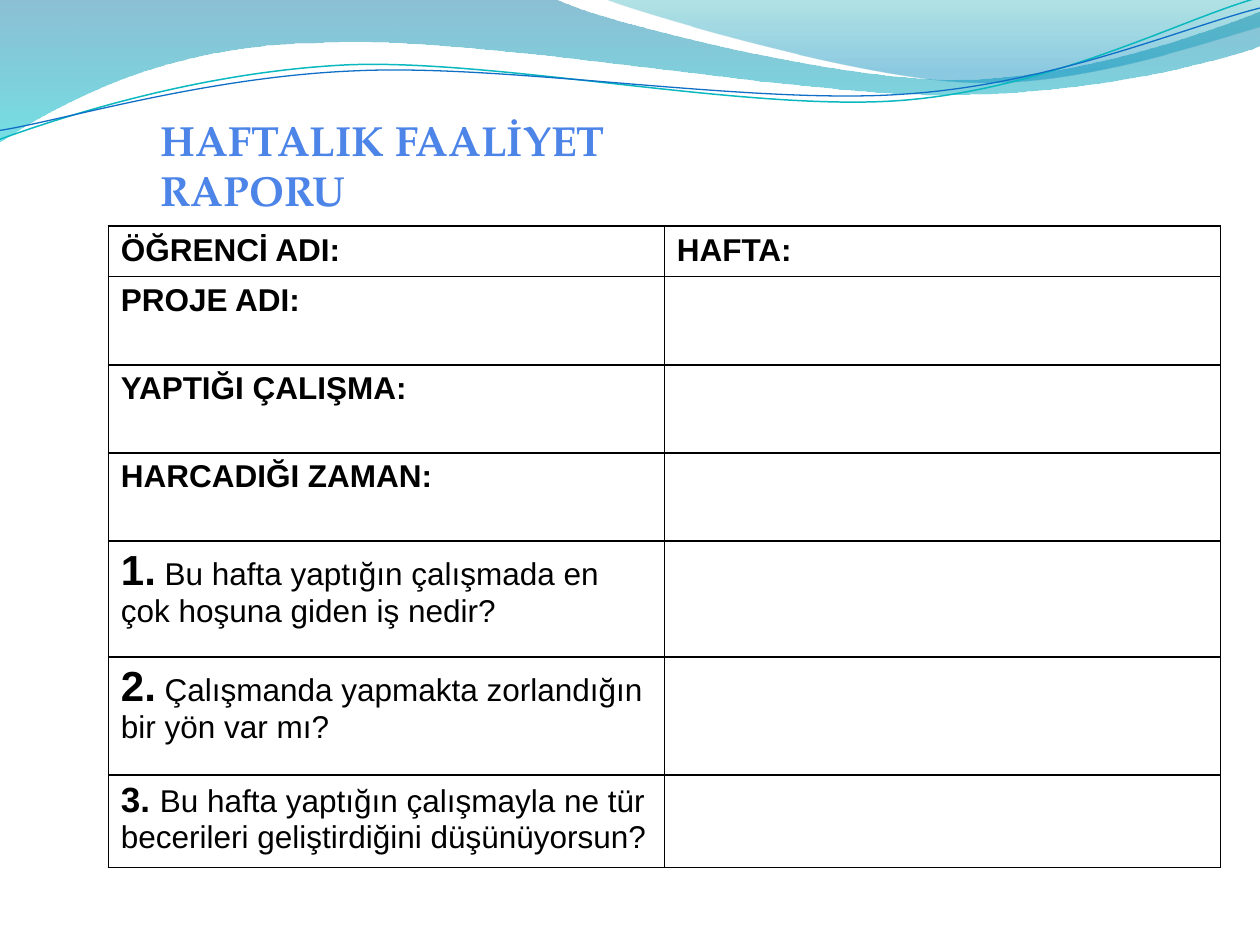
from lxml import etree
from pptx import Presentation
from pptx.dml.color import RGBColor
from pptx.enum.text import MSO_AUTO_SIZE
from pptx.oxml.ns import qn
from pptx.util import Inches, Pt

COLUMNS, ROWS = 100, 75
HEADING_FONT, BODY_FONT = "TeX Gyre Pagella", "Arial"
BLACK, HEADING_BLUE = "000000", "4C84E8"
GROW = MSO_AUTO_SIZE.SHAPE_TO_FIT_TEXT
STRAND_TILT = 357.3
CELL_EDGES = ("a:lnL", "a:lnR", "a:lnT", "a:lnB")


def rgb(value):
    return RGBColor.from_string(value)


def add_text(paragraph, text, size=18, font=BODY_FONT, color=BLACK, bold=False):
    run = paragraph.add_run()
    run.text = text
    run.font.size = Pt(size)
    run.font.name = font
    run.font.bold = bold
    run.font.color.rgb = rgb(color)


def bend(shape, segments):
    """Join the three straight steps of each six-number segment into one cubic curve."""
    steps = iter(list(shape._element.iter(qn("a:lnTo"))))
    for segment in segments:
        first = next(steps)
        if len(segment) == 6:
            curve = etree.Element(qn("a:cubicBezTo"))
            first.addprevious(curve)
            for step in (first, next(steps), next(steps)):
                curve.append(step[0])
                step.getparent().remove(step)


class ReportSlide:
    """Places elements on a grid of 100 columns by 75 rows."""

    def __init__(self, presentation):
        self.width, self.height = presentation.slide_width, presentation.slide_height
        self.slide = presentation.slides.add_slide(presentation.slide_layouts[6])

    def x(self, columns):
        return round(self.width * columns / COLUMNS)

    def y(self, rows):
        return round(self.height * rows / ROWS)

    def outline(self, start, segments, closed):
        """A segment is a line end (2 numbers) or a cubic curve (6 numbers)."""
        places = [(self.x(segment[i]), self.y(segment[i + 1]))
                  for segment in segments for i in range(0, len(segment), 2)]
        builder = self.slide.shapes.build_freeform(self.x(start[0]), self.y(start[1]))
        builder.add_line_segments(places, close=closed)
        shape = builder.convert_to_shape()
        bend(shape, segments)
        shape.shadow.inherit = False
        return shape

    def wave(self, start, segments, stops):
        """Fill a closed outline downwards; each stop is position, colour, opacity in %."""
        shape = self.outline(start, segments, closed=True)
        shape.line.fill.background()
        shape.fill.gradient()
        shape.fill.gradient_angle = 270
        gradient_stops = shape._element.spPr.iter(qn("a:gs"))
        for stop, element, (position, color, opacity) in zip(
                shape.fill.gradient_stops, gradient_stops, stops):
            stop.color.rgb = rgb(color)
            stop.position = position / 100
            alpha = etree.SubElement(element[0], qn("a:alpha"))
            alpha.set("val", str(opacity * 1000))

    def strand(self, start, segments, color, width):
        shape = self.outline(start, segments, closed=False)
        shape.rotation = STRAND_TILT
        shape.fill.background()
        shape.line.color.rgb = rgb(color)
        shape.line.width = Pt(width)

    def heading(self, text, left, top, width, height):
        box = self.slide.shapes.add_textbox(
            self.x(left), self.y(top), self.x(width), self.y(height))
        box.text_frame.word_wrap = True
        box.text_frame.auto_size = GROW
        add_text(box.text_frame.paragraphs[0], text,
                 size=24, font=HEADING_FONT, color=HEADING_BLUE, bold=True)

    def border(self, cell):
        properties = cell._tc.get_or_add_tcPr()
        for position, edge in enumerate(CELL_EDGES):
            line = etree.Element(qn(edge), w=str(Pt(1)))
            fill = etree.SubElement(line, qn("a:solidFill"))
            etree.SubElement(fill, qn("a:srgbClr"), val=BLACK)
            properties.insert(position, line)

    def form(self, entries, left, top, width, heights):
        """Each entry holds the cells of one row; a cell is a list of (text, format)."""
        table = self.slide.shapes.add_table(
            len(entries), 2, self.x(left), self.y(top),
            self.x(width), self.y(sum(heights))).table
        table.first_row = table.horz_banding = False
        for row, height, cells in zip(table.rows, heights, entries):
            row.height = self.y(height)
            for cell, pieces in zip(row.cells, cells):
                cell.fill.background()
                self.border(cell)
                for text, style in pieces:
                    add_text(cell.text_frame.paragraphs[0], text, **style)


def label(text):
    return [(text, {"bold": True})]


def question(number, text):
    return [(number, {"size": 24, "bold": True}), (" ", {"bold": True}), (text, {})]


def main():
    presentation = Presentation()
    presentation.slide_width, presentation.slide_height = Inches(10), Inches(7.5)
    report = ReportSlide(presentation)

    report.wave(
        (0, -0.1),
        [(44, -0.1), (47.6, 1.7, 66.4, 6.3, 75.8, 6.3),
         (85.3, 6.3, 95.8, 2.6, 100, 0.9), (100.1, 3.6),
         (98.3, 4.4, 87, 7.6, 74.6, 7.5), (62.2, 7.5, 38.2, 2.8, 25.7, 3.4),
         (12.9, 3.5, 4.6, 8.3, -0.1, 11.3)],
        [(0, "0074A1", 45), (100, "00C6CF", 55)])
    report.wave(
        (47.9, -0.1),
        [(50.9, 1.1, 68.2, 6.2, 76.9, 6.5), (85.6, 6.9, 96.1, 3.2, 100, 2.1), (100, 0)],
        [(0, "00A1A9", 30), (80, "008BBF", 45)])
    report.strand(
        (-0.2, 8.7),
        [(4.7, 7.2, 15.8, 4.1, 27.7, 4.1), (39.6, 4.2, 59.1, 9.3, 71.2, 9),
         (83.2, 8.7, 93.9, 3.6, 100, 2.2)],
        "0AB8BF", 0.85)
    report.strand(
        (-0.2, 8),
        [(4.6, 7.5, 16.4, 4.5, 28.3, 4.6), (40.3, 4.6, 59.6, 8.8, 71.6, 8.5),
         (83.5, 8.3, 94.2, 4.2, 100.2, 3)],
        "0F6FC6", 0.75)

    report.heading("HAFTALIK FAALİYET RAPORU", left=11.75, top=8.6, width=50.5, height=5.1)
    report.form(
        [
            (label("ÖĞRENCİ ADI:"), label("HAFTA:")),
            (label("PROJE ADI:"), []),
            (label("YAPTIĞI ÇALIŞMA:"), []),
            (label("HARCADIĞI ZAMAN:"), []),
            (question("1.", "Bu hafta yaptığın çalışmada en çok hoşuna giden iş nedir?"), []),
            (question("2.", "Çalışmanda yapmakta zorlandığın bir yön var mı?"), []),
            ([("3. ", {"size": 20, "bold": True}),
              ("Bu hafta yaptığın çalışmayla ne tür becerileri "
               "geliştirdiğini düşünüyorsun?", {})], []),
        ],
        left=8.6, top=17.95, width=88.26, heights=[4, 7, 7, 7, 9.2, 9.35, 7.3])

    presentation.save("out.pptx")


if __name__ == "__main__":
    main()
